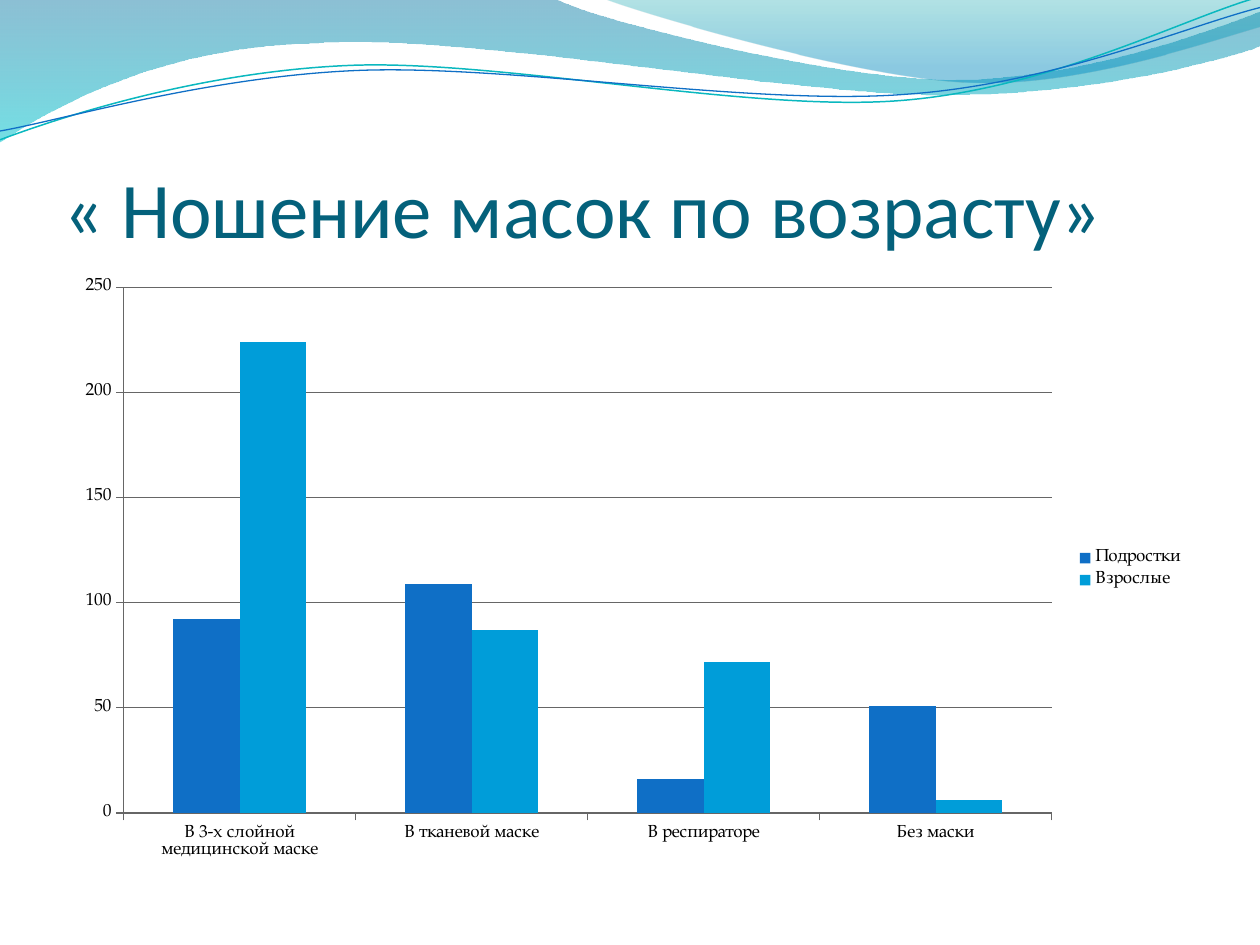
from dataclasses import dataclass

from lxml.etree import SubElement
from pptx import Presentation
from pptx.chart.data import CategoryChartData
from pptx.dml.color import RGBColor
from pptx.enum.chart import XL_CHART_TYPE as ChartType
from pptx.enum.chart import XL_LEGEND_POSITION as LegendPos
from pptx.enum.chart import XL_TICK_MARK as TickMark
from pptx.enum.text import MSO_ANCHOR, MSO_AUTO_SIZE, PP_ALIGN
from pptx.oxml.ns import qn
from pptx.util import Cm, Pt

TITLE_FONT, CHART_FONT = "Calibri", "TeX Gyre Pagella"

Point = tuple[float, float]
Segment = tuple[Point, ...]  # one point: straight line; three: Bezier curve


@dataclass
class Stop:
    position: float
    color: str
    opacity: int


@dataclass
class Wave:
    """An outline in inches: a band with gradient stops or an open line."""
    start: Point
    segments: list[Segment]
    stops: tuple[Stop, ...] = ()
    line: str = ""
    width: float = 0


@dataclass
class Series:
    name: str
    values: tuple[int, ...]
    color: str


WAVES = [
    Wave((0, 0), [
        ((4.4, -0.01),),
        ((4.76, 0.17), (6.64, 0.63), (7.58, 0.63)),
        ((8.53, 0.63), (9.58, 0.26), (10, 0.09)),
        ((10.01, 0.36),),
        ((9.83, 0.44), (8.7, 0.76), (7.46, 0.75)),
        ((6.22, 0.75), (3.82, 0.28), (2.57, 0.34)),
        ((1.29, 0.36), (0.46, 0.83), (-0.01, 1.13)),
        ((0, 0),),
    ], stops=(Stop(0, "0074A1", 45), Stop(1, "00C6CF", 55))),
    Wave((4.79, -0.01), [
        ((5.09, 0.11), (6.82, 0.62), (7.69, 0.65)),
        ((8.56, 0.69), (9.61, 0.32), (10, 0.21)),
        ((10, 0),),
        ((4.79, -0.01),),
    ], stops=(Stop(0, "00A1A9", 30), Stop(0.8, "008BBF", 45))),
    Wave((0, 1.11), [
        ((0.48, 0.93), (1.58, 0.57), (2.77, 0.52)),
        ((3.95, 0.47), (5.93, 0.89), (7.13, 0.8)),
        ((8.33, 0.71), (9.38, 0.15), (9.98, -0.02)),
    ], line="0AB8BF", width=0.85),
    Wave((0, 1.04), [
        ((0.47, 0.96), (1.64, 0.61), (2.83, 0.56)),
        ((4.03, 0.51), (5.97, 0.84), (7.17, 0.75)),
        ((8.36, 0.67), (9.41, 0.21), (10, 0.06)),
    ], line="0F6FC6", width=0.75),
]

CATEGORIES = ["В 3-х слойной медицинской маске", "В тканевой маске",
              "В респираторе", "Без маски"]
SERIES = [
    Series("Подростки", (92, 109, 16, 51), "0F6FC6"),
    Series("Взрослые", (224, 87, 72, 6), "009DD9"),
]


def rgb(color: str) -> RGBColor:
    return RGBColor.from_string(color)


def to_emu(point: Point) -> tuple[int, int]:
    return Cm(point[0] * 2.54), Cm(point[1] * 2.54)


def bend_segments(sp, segments: list[Segment]) -> None:
    """Turn the straight lines of three-point segments into Bezier curves."""
    lines = list(sp._element.iter(qn("a:lnTo")))
    for line, seg in zip(lines, segments):
        if len(seg) == 1:
            continue
        parent = line.getparent()
        curve = SubElement(parent, qn("a:cubicBezTo"))
        for x, y in map(to_emu, seg):
            SubElement(curve, qn("a:pt"), x=str(x - sp.left), y=str(y - sp.top))
        parent.replace(line, curve)


def fill_gradient(sp, stops: tuple[Stop, ...]) -> None:
    """Fill from top to bottom with translucent stops."""
    sp.fill.gradient()
    sp.fill.gradient_angle = 270
    for gs, stop in zip(sp.fill.gradient_stops, stops):
        gs.position = stop.position
        gs.color.rgb = rgb(stop.color)
    colors = sp._element.spPr.iter(qn("a:srgbClr"))
    for clr, stop in zip(colors, stops):
        SubElement(clr, qn("a:alpha"), val=str(stop.opacity * 1000))


def draw_wave(slide, wave: Wave) -> None:
    builder = slide.shapes.build_freeform(*to_emu(wave.start))
    builder.add_line_segments([to_emu(seg[-1]) for seg in wave.segments],
                              close=bool(wave.stops))
    sp = builder.convert_to_shape()
    bend_segments(sp, wave.segments)
    sp.shadow.inherit = False
    if wave.stops:
        fill_gradient(sp, wave.stops)
        sp.line.fill.background()
    else:
        sp.fill.background()
        sp.line.color.rgb = rgb(wave.line)
        sp.line.width = Pt(wave.width)


def set_title(sp, text: str, *, size: float, font: str, color: str) -> None:
    sp.left, sp.top, sp.width, sp.height = Cm(1.27), Cm(1.73), Cm(22.86), Cm(3.4)
    tf = sp.text_frame
    tf.word_wrap = True
    tf.auto_size = MSO_AUTO_SIZE.NONE
    tf.vertical_anchor = MSO_ANCHOR.BOTTOM
    tf.margin_left = tf.margin_right = tf.margin_bottom = 0
    tf.margin_top = Cm(0.13)
    p = tf.paragraphs[0]
    p.alignment = PP_ALIGN.LEFT
    r = p.add_run()
    r.text = text
    r.font.size, r.font.name, r.font.color.rgb = Pt(size), font, rgb(color)


def add_mask_chart(slide) -> None:
    data = CategoryChartData()
    data.categories = CATEGORIES
    for series in SERIES:
        data.add_series(series.name, series.values)
    chart = slide.shapes.add_chart(ChartType.COLUMN_CLUSTERED, Cm(1.27), Cm(5.38),
                                   Cm(22.86), Cm(12.19), data).chart
    chart.has_title = False
    chart.font.size, chart.font.name = Pt(10), CHART_FONT
    chart.font.color.rgb = rgb("000000")

    plot = chart.plots[0]
    plot.vary_by_categories = False
    plot.gap_width, plot.overlap = 150, 0
    for drawn, series in zip(plot.series, SERIES):
        drawn.format.fill.solid()
        drawn.format.fill.fore_color.rgb = rgb(series.color)

    values = chart.value_axis
    values.minimum_scale, values.maximum_scale, values.major_unit = 0, 250, 50
    values.has_major_gridlines = True
    for axis in (chart.category_axis, values):
        axis.major_tick_mark = TickMark.OUTSIDE
    for item in (chart.category_axis, values, values.major_gridlines):
        item.format.line.color.rgb = rgb("666666")

    chart.has_legend = True
    chart.legend.position = LegendPos.RIGHT
    chart.legend.include_in_layout = False


def main() -> None:
    prs = Presentation()
    prs.slide_width, prs.slide_height = Cm(25.4), Cm(19.05)
    slide = prs.slides.add_slide(prs.slide_layouts[5])
    for wave in WAVES:
        draw_wave(slide, wave)
    set_title(slide.shapes.title, "« Ношение масок по возрасту»",
              size=45, font=TITLE_FONT, color="04617B")
    add_mask_chart(slide)
    prs.save("out.pptx")


if __name__ == "__main__":
    main()
